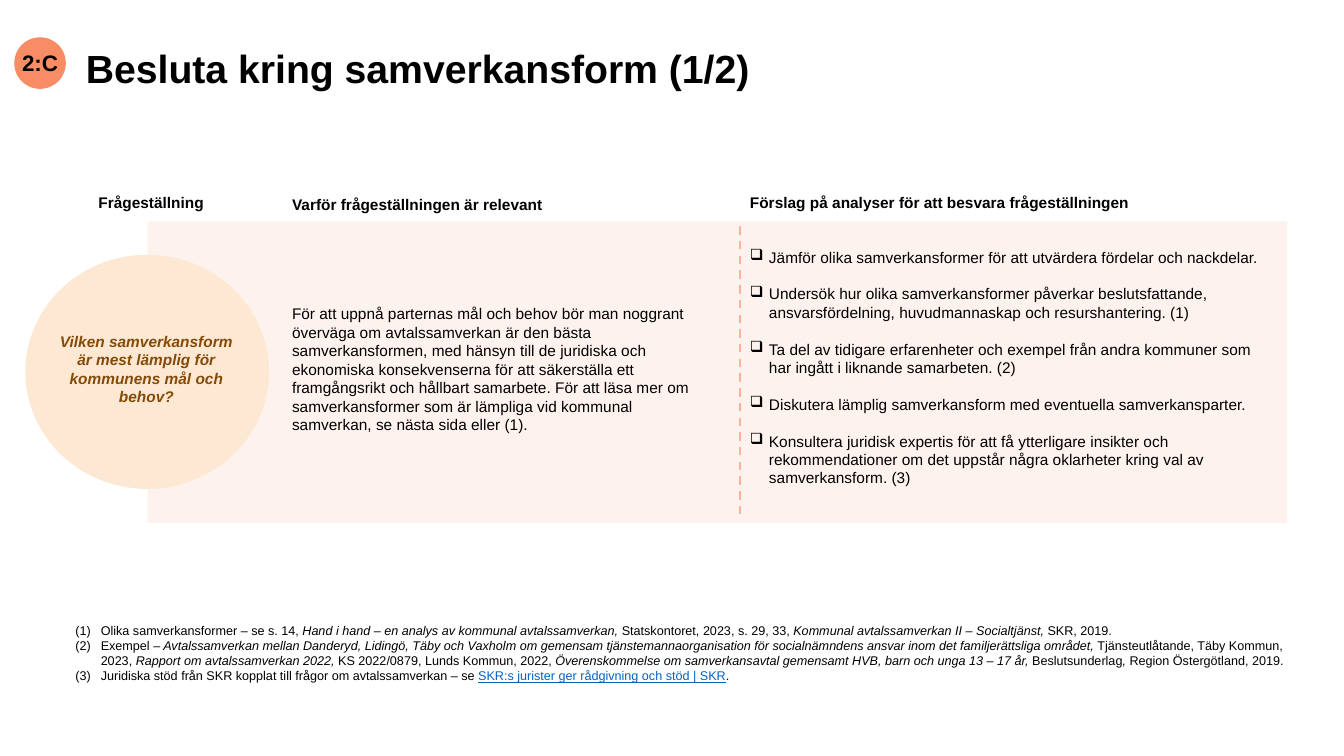
from lxml.etree import SubElement
from pptx import Presentation
from pptx.dml.color import RGBColor
from pptx.enum.dml import MSO_LINE_DASH_STYLE as DASH
from pptx.enum.shapes import MSO_CONNECTOR as CONN, MSO_SHAPE as SHAPE
from pptx.enum.text import MSO_ANCHOR as ANCHOR, PP_ALIGN as ALIGN
from pptx.oxml.ns import qn
from pptx.util import Cm, Pt

COL_WHY, COL_ANALYSIS = 7.11, 18.52

WHY = (
    "För att uppnå parternas mål och behov bör man noggrant överväga om avtalssamverkan "
    "är den bästa samverkansformen, med hänsyn till de juridiska och ekonomiska "
    "konsekvenserna för att säkerställa ett framgångsrikt och hållbart samarbete. För att "
    "läsa mer om samverkansformer som är lämpliga vid kommunal samverkan, se nästa sida "
    "eller (1)."
)
ANALYSES = [
    "Jämför olika samverkansformer för att utvärdera fördelar och nackdelar.",
    "Undersök hur olika samverkansformer påverkar beslutsfattande, ansvarsfördelning, "
    "huvudmannaskap och resurshantering. (1)",
    "Ta del av tidigare erfarenheter och exempel från andra kommuner som har ingått i "
    "liknande samarbeten. (2)",
    "Diskutera lämplig samverkansform med eventuella samverkansparter.",
    "Konsultera juridisk expertis för att få ytterligare insikter och rekommendationer "
    "om det uppstår några oklarheter kring val av samverkansform. (3)",
]
ITALIC = {"italic": True}
LINK = {"color": "0563C1", "underline": True}
NOTES = [
    [
        ("Olika samverkansformer – se s. 14, ", {}),
        ("Hand i hand – en analys av kommunal avtalssamverkan, ", ITALIC),
        ("Statskontoret, 2023, s. 29, 33, ", {}),
        ("Kommunal avtalssamverkan II – Socialtjänst, ", ITALIC),
        ("SKR, 2019.", {}),
    ],
    [
        ("Exempel", {}),
        (" – Avtalssamverkan mellan Danderyd, Lidingö, Täby och Vaxholm om gemensam "
         "tjänstemannaorganisation för socialnämndens ansvar inom det familjerättsliga "
         "området, ", ITALIC),
        ("Tjänsteutlåtande, Täby Kommun, 2023, ", {}),
        ("Rapport om avtalssamverkan 2022, ", ITALIC),
        ("KS 2022/0879, Lunds Kommun, 2022, ", {}),
        ("Överenskommelse om samverkansavtal gemensamt HVB, barn och unga 13 – 17 år, ",
         ITALIC),
        ("Beslutsunderlag", {}),
        (", ", ITALIC),
        ("Region Östergötland, 2019.", {}),
    ],
    [
        ("Juridiska stöd från SKR kopplat till frågor om avtalssamverkan – se ", {}),
        ("SKR:s jurister ger rådgivning och stöd | SKR", LINK),
        (".", {}),
    ],
]


def rgb(value):
    return RGBColor.from_string(value)


class SlideBuilder:
    font = "Arial"
    text_color = "000000"

    def __init__(self, prs):
        self.s = prs.slides.add_slide(prs.slide_layouts[5])

    def run(self, p, text, size, color=None, **style):
        r = p.add_run()
        r.text = text
        r.font.name, r.font.size = self.font, Pt(size)
        r.font.color.rgb = rgb(color or self.text_color)
        for name, value in style.items():
            setattr(r.font, name, value)

    def title(self, text, *box):
        sp = self.s.shapes.title
        sp.left, sp.top, sp.width, sp.height = map(Cm, box)
        tf = sp.text_frame
        tf.word_wrap, tf.vertical_anchor = True, ANCHOR.MIDDLE
        p = tf.paragraphs[0]
        p.alignment, p.line_spacing = ALIGN.LEFT, 0.95
        self.run(p, text, 28, bold=True)

    def shape(self, kind, fill, *box, alpha=None):
        sp = self.s.shapes.add_shape(kind, *map(Cm, box))
        sp.shadow.inherit = False
        sp.fill.solid()
        sp.fill.fore_color.rgb = rgb(fill)
        sp.line.fill.background()
        if alpha:
            clr = sp.fill._xPr.find(".//" + qn("a:srgbClr"))
            SubElement(clr, qn("a:alpha"), val=str(alpha * 1000))
        return sp

    def badge(self, text, fill, *box):
        tf = self.shape(SHAPE.OVAL, fill, *box).text_frame
        tf.margin_left = tf.margin_right = tf.margin_top = tf.margin_bottom = 0
        tf.word_wrap, tf.vertical_anchor = False, ANCHOR.MIDDLE
        tf.paragraphs[0].alignment = ALIGN.CENTER
        self.run(tf.paragraphs[0], text, 16, bold=True)

    def dashed_line(self, color, x, top, bottom):
        line = self.s.shapes.add_connector(CONN.STRAIGHT, Cm(x), Cm(top), Cm(x), Cm(bottom))
        line.line.color.rgb = rgb(color)
        line.line.width, line.line.dash_style = Pt(1.5), DASH.DASH
        SubElement(line._element.spPr, qn("a:effectLst"))

    def text_frame(self, *box):
        tf = self.s.shapes.add_textbox(*map(Cm, box)).text_frame
        tf.word_wrap = True
        return tf

    def text(self, text, *box, align=ALIGN.LEFT, **style):
        p = self.text_frame(*box).paragraphs[0]
        p.alignment = align
        self.run(p, text, 11, **style)

    def list(self, items, size, indent, gap, bullet, *box):
        """Hanging list; items hold (text, style) runs, bullet is (tag, attributes)."""
        tf = self.text_frame(*box)
        tag, attributes = bullet
        for i, runs in enumerate(items):
            p = tf.add_paragraph() if i else tf.paragraphs[0]
            pPr = p._p.get_or_add_pPr()
            pPr.set("marL", str(Cm(indent)))
            pPr.set("indent", str(-Cm(indent)))
            SubElement(pPr, qn(tag), attributes)
            if i:
                p.space_before = Pt(gap)
            for text, style in runs:
                self.run(p, text, size, **style)


def main():
    prs = Presentation()
    prs.slide_width, prs.slide_height = Cm(33.87), Cm(19.05)
    b = SlideBuilder(prs)

    b.title("Besluta kring samverkansform (1/2)", 1.91, 0.99, 26.7, 1.55)
    b.badge("2:C", "F88C64", 0.36, 0.94, 1.3, 1.3)

    b.shape(SHAPE.RECTANGLE, "FDD9CB", 3.72, 5.58, 28.72, 7.6, alpha=32)
    b.dashed_line("FAB398", 18.64, 5.7, 13.08)
    b.shape(SHAPE.OVAL, "FDE9D3", 0.64, 6.42, 6.14, 5.9)

    for heading, x, y, w in [
        ("Frågeställning", 2.23, 4.73, 3.25),
        ("Varför frågeställningen är relevant", COL_WHY, 4.8, 6.91),
        ("Förslag på analyser för att besvara frågeställningen", COL_ANALYSIS + 0.13, 4.75, 10.2),
    ]:
        b.text(heading, x, y, w, 0.73, bold=True)

    b.text("Vilken samverkansform är mest lämplig för kommunens mål och behov?",
           1.2, 8.24, 4.98, 2.13, align=ALIGN.CENTER, color="854A07", bold=True, italic=True)
    b.text(WHY, COL_WHY, 7.54, 11.02, 3.56)
    b.list([[(text, {})] for text in ANALYSES], 11, 0.48, 13,
           ("a:buChar", {"char": "❑"}), COL_ANALYSIS + 0.13, 6.12, 13.59, 6.38)
    b.list(NOTES, 9, 0.64, 0, ("a:buAutoNum", {"type": "arabicParenBoth"}),
           1.65, 15.57, 31.24, 1.8)

    prs.save("out.pptx")


if __name__ == "__main__":
    main()
